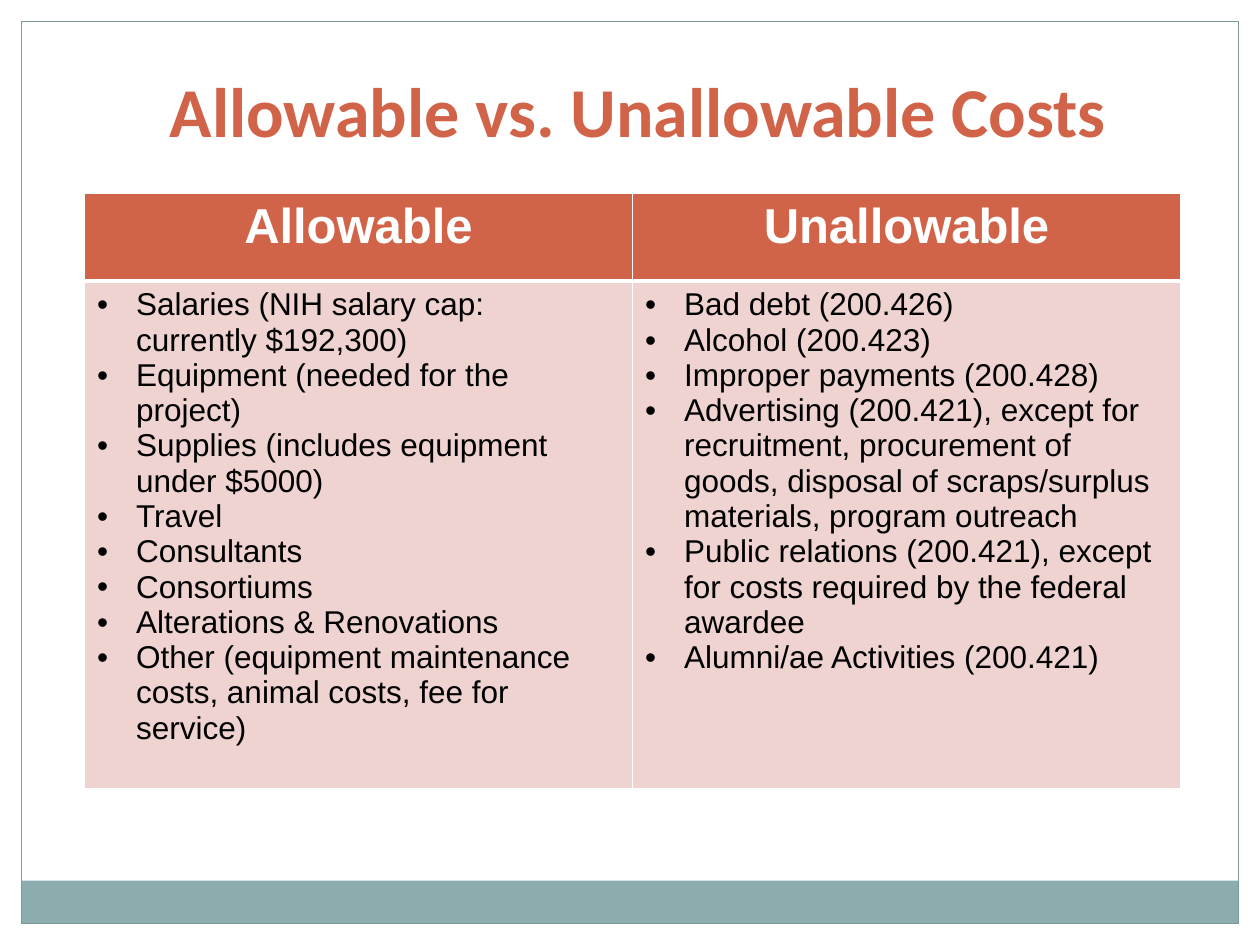
from dataclasses import dataclass

from lxml import etree
from pptx import Presentation
from pptx.dml.color import RGBColor
from pptx.enum.shapes import MSO_SHAPE
from pptx.enum.text import MSO_ANCHOR, PP_ALIGN
from pptx.oxml.ns import qn
from pptx.util import Inches, Pt

RECTANGLE = MSO_SHAPE.RECTANGLE
BOTTOM = MSO_ANCHOR.BOTTOM
CENTER, LEFT = PP_ALIGN.CENTER, PP_ALIGN.LEFT
TITLE_ONLY = 5


@dataclass(frozen=True)
class Theme:
    accent: str = "D16349"
    tint: str = "EED3D0"
    band: str = "8CADAE"
    outline: str = "7C999A"
    white: str = "FFFFFF"
    black: str = "000000"
    title_font: str = "Calibri"
    table_font: str = "Arial"
    title_size: int = 40
    header_size: int = 28
    body_size: int = 18
    thin_line: int = 1
    header_line: int = 3


THEME = Theme()
BULLET_INDENT = Inches(0.31)

COSTS = {
    "Allowable": [
        "Salaries (NIH salary cap:  currently $192,300)",
        "Equipment (needed for the project)",
        "Supplies (includes equipment under $5000)",
        "Travel",
        "Consultants",
        "Consortiums",
        "Alterations & Renovations",
        "Other (equipment maintenance costs, animal costs, fee for service)",
    ],
    "Unallowable": [
        "Bad debt (200.426)",
        "Alcohol (200.423)",
        "Improper payments (200.428)",
        "Advertising (200.421), except for recruitment, procurement of goods, "
        "disposal of scraps/surplus materials, program outreach",
        "Public relations (200.421), except for costs required by the federal awardee",
        "Alumni/ae Activities (200.421)",
    ],
}


def style_runs(paragraph, font_name, size, color, bold):
    for run in paragraph.runs:
        run.font.name = font_name
        run.font.size = Pt(size)
        run.font.bold = bold
        run.font.color.rgb = RGBColor.from_string(color)


def add_panel(slide, box, fill=None, line=None):
    panel = slide.shapes.add_shape(RECTANGLE, *box)
    panel.shadow.inherit = False
    if fill:
        panel.fill.solid()
        panel.fill.fore_color.rgb = RGBColor.from_string(fill)
    else:
        panel.fill.background()
    if line:
        panel.line.color.rgb = RGBColor.from_string(line)
        panel.line.width = Pt(0.75)
    else:
        panel.line.fill.background()


def add_page_frame(slide, box):
    """Draw white margins, the coloured footer band and the outline."""
    left, top, width, height = box
    margin, band_height = Inches(0.17), Inches(0.34)
    inner_width, inner_height = width - 2 * margin, height - 2 * margin
    margins = [
        (left, top, width, margin),
        (left + width - margin, top, margin, height),
        (left, top, margin, height),
    ]
    for strip in margins:
        add_panel(slide, strip, fill=THEME.white)
    band_top = top + height - margin - band_height
    add_panel(slide, (left + margin, band_top, inner_width, band_height), fill=THEME.band)
    add_panel(slide, (left + margin, top + margin, inner_width, inner_height),
              line=THEME.outline)


def place_title(slide, box, wording):
    title = slide.shapes.title
    slide.shapes._spTree.append(title._element)
    title.left, title.top, title.width, title.height = box
    title.text_frame.text = wording
    title.text_frame.vertical_anchor = BOTTOM
    heading = title.text_frame.paragraphs[0]
    heading.alignment = CENTER
    style_runs(heading, THEME.title_font, THEME.title_size, THEME.accent, True)


def set_borders(cell, top=THEME.thin_line, bottom=THEME.thin_line):
    properties = cell._tc.get_or_add_tcPr()
    widths = {"L": THEME.thin_line, "R": THEME.thin_line, "T": top, "B": bottom}
    for position, (side, width) in enumerate(widths.items()):
        border = etree.Element(qn(f"a:ln{side}"), w=str(Pt(width)))
        fill = etree.SubElement(border, qn("a:solidFill"))
        etree.SubElement(fill, qn("a:srgbClr"), val=THEME.white)
        properties.insert(position, border)


def fill_cell(cell, color):
    cell.fill.solid()
    cell.fill.fore_color.rgb = RGBColor.from_string(color)


def add_bullet(paragraph):
    properties = paragraph._p.get_or_add_pPr()
    properties.set("marL", str(BULLET_INDENT))
    properties.set("indent", str(-BULLET_INDENT))
    etree.SubElement(properties, qn("a:buFont"), typeface=THEME.table_font)
    etree.SubElement(properties, qn("a:buChar"), char="•")


def write_header(cell, heading):
    fill_cell(cell, THEME.accent)
    set_borders(cell, bottom=THEME.header_line)
    cell.text_frame.text = heading
    paragraph = cell.text_frame.paragraphs[0]
    paragraph.alignment = CENTER
    style_runs(paragraph, THEME.table_font, THEME.header_size, THEME.white, True)


def write_list(cell, items):
    fill_cell(cell, THEME.tint)
    set_borders(cell, top=THEME.header_line)
    cell.text_frame.text = "\n".join(items)
    for paragraph in cell.text_frame.paragraphs:
        add_bullet(paragraph)
        paragraph.alignment = LEFT
        style_runs(paragraph, THEME.table_font, THEME.body_size, THEME.black, False)


def add_cost_table(slide, box, costs):
    table = slide.shapes.add_table(2, len(costs), *box).table
    header_height = Inches(0.7)
    table.rows[0].height = header_height
    table.rows[1].height = box[3] - header_height
    for column, (heading, items) in enumerate(costs.items()):
        write_header(table.cell(0, column), heading)
        write_list(table.cell(1, column), items)


def main():
    deck = Presentation()
    deck.slide_width, deck.slide_height = Inches(10), Inches(7.5)
    slide = deck.slides.add_slide(deck.slide_layouts[TITLE_ONLY])
    width, height = deck.slide_width, deck.slide_height

    add_page_frame(slide, (0, 0, width, height))
    place_title(slide, (0, 0, width, height // 6), " Allowable vs. Unallowable Costs")
    add_cost_table(slide, (Inches(0.67), Inches(1.53), Inches(8.7), Inches(4.73)), COSTS)
    deck.save("out.pptx")


if __name__ == "__main__":
    main()
